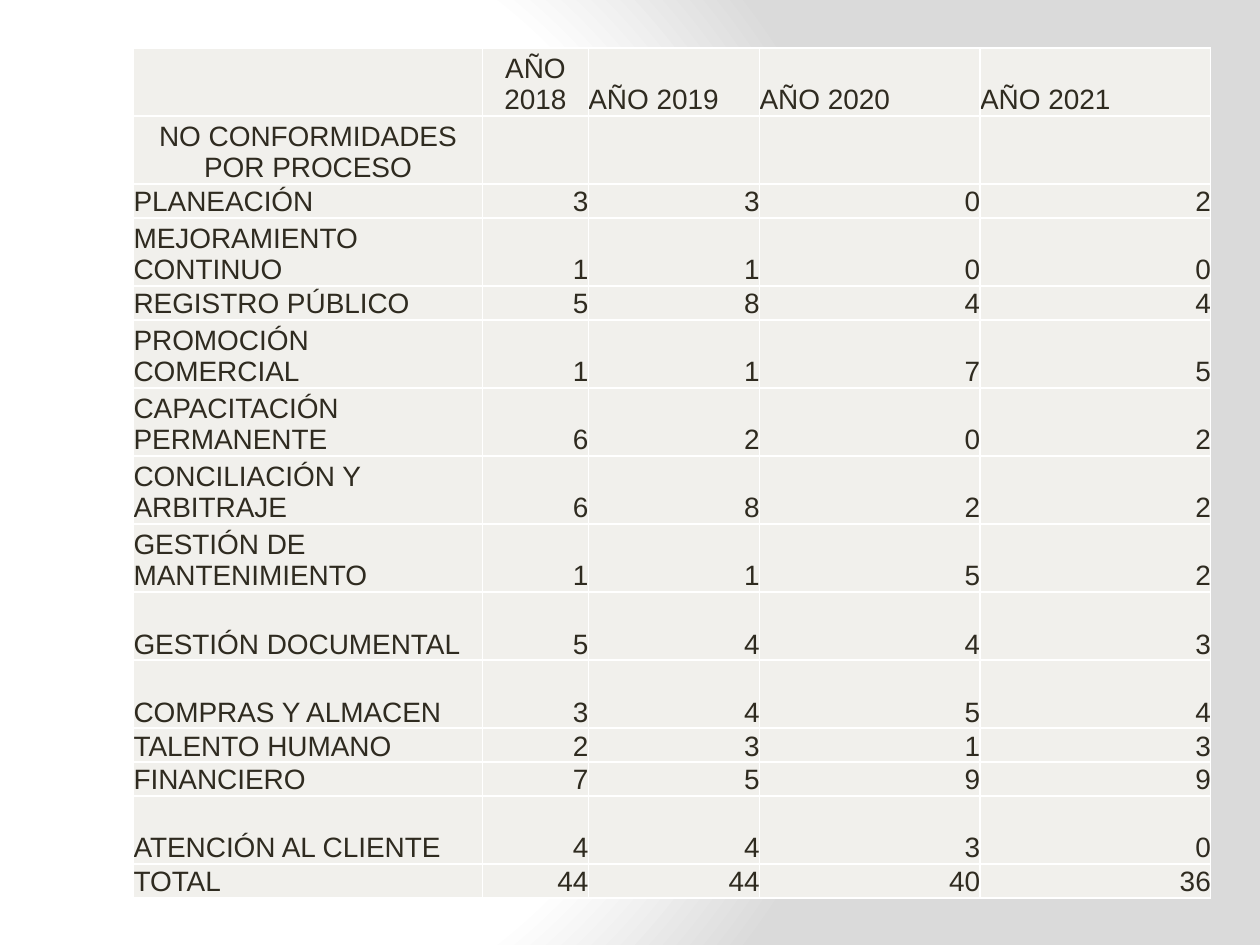
from lxml import etree
from pptx import Presentation
from pptx import util as u
from pptx.dml.color import RGBColor
from pptx.enum import text
from pptx.oxml import parse_xml
from pptx.oxml.ns import nsdecls

INK = RGBColor(0x2F, 0x2B, 0x20)
PALE = RGBColor(0xF1, 0xF0, 0xEC)
WHITE = RGBColor(0xFF, 0xFF, 0xFF)
GREY = RGBColor(0xDA, 0xDA, 0xDA)
LEFT, MID, RIGHT = text.PP_ALIGN.LEFT, text.PP_ALIGN.CENTER, text.PP_ALIGN.RIGHT

# Process, row height in lines, findings per year
DATA = [
    ("PLANEACIÓN", 1, (3, 3, 0, 2)),
    ("MEJORAMIENTO CONTINUO", 2, (1, 1, 0, 0)),
    ("REGISTRO PÚBLICO", 1, (5, 8, 4, 4)),
    ("PROMOCIÓN COMERCIAL", 2, (1, 1, 7, 5)),
    ("CAPACITACIÓN PERMANENTE", 2, (6, 2, 0, 2)),
    ("CONCILIACIÓN Y ARBITRAJE", 2, (6, 8, 2, 2)),
    ("GESTIÓN DE MANTENIMIENTO", 2, (1, 1, 5, 2)),
    ("GESTIÓN DOCUMENTAL", 2, (5, 4, 4, 3)),
    ("COMPRAS Y ALMACEN", 2, (3, 4, 5, 4)),
    ("TALENTO HUMANO", 1, (2, 3, 1, 3)),
    ("FINANCIERO", 1, (7, 5, 9, 9)),
    ("ATENCIÓN AL CLIENTE", 2, (4, 4, 3, 0)),
]
sums = [sum(col) for col in zip(*(vals for _, _, vals in DATA))]
years = [f"AÑO {year}" for year in range(2018, 2022)]
rows = [("", 2, years), ("NO CONFORMIDADES POR PROCESO", 2, [""] * 4),
        *DATA, ("TOTAL", 1, sums)]
COLS = [2.77, 0.84, 1.36, 1.75, 1.83]
LINE = 0.27

deck = Presentation()
deck.slide_width, deck.slide_height = u.Inches(10), u.Inches(7.5)
slide = deck.slides.add_slide(deck.slide_layouts[6])

# Background: radial fade from white to grey
fill = slide.background.fill
fill.gradient()
stops = "".join(f'<a:gs pos="{pos}000"><a:srgbClr val="{tone}"/></a:gs>'
                for pos, tone in ((0, WHITE), (75, WHITE), (100, GREY)))
fade = parse_xml(
    f'<a:gradFill {nsdecls("a")} rotWithShape="1"><a:gsLst>{stops}</a:gsLst>'
    '<a:path path="circle"><a:fillToRect l="20000" t="50000" r="100000" b="50000"/>'
    '</a:path></a:gradFill>')
old = slide.background._cSld.find(".//" + fade.tag)
old.getparent().replace(old, fade)

# Table grid
high = LINE * sum(size for _, size, _ in rows)
table = slide.shapes.add_table(len(rows), len(COLS), u.Inches(1.06), u.Inches(0.38),
                               u.Inches(sum(COLS)), u.Inches(high)).table
table.first_row = table.horz_banding = False
for col, wide in zip(table.columns, COLS):
    col.width = u.Inches(wide)

# Cells: white rules, pale fill, text at the bottom
for r, (name, size, vals) in enumerate(rows):
    table.rows[r].height = u.Inches(LINE * size)
    for c, val in enumerate([name, *vals]):
        cell = table.cell(r, c)
        cell.margin_left = cell.margin_right = cell.margin_top = cell.margin_bottom = 0
        cell.vertical_anchor = text.MSO_ANCHOR.BOTTOM
        for side in ("lnL", "lnR", "lnT", "lnB"):
            cell._tc.get_or_add_tcPr().append(parse_xml(
                f'<a:{side} {nsdecls("a")} w="12700"><a:solidFill>'
                f'<a:srgbClr val="{WHITE}"/></a:solidFill></a:{side}>'))
        cell.fill.solid()
        cell.fill.fore_color.rgb = PALE
        if val == "":
            continue
        cell.text = str(val)
        para = cell.text_frame.paragraphs[0]
        if (r, c) in ((0, 1), (1, 0)):
            para.alignment = MID
        else:
            para.alignment = RIGHT if r > 1 and c else LEFT
        para.font.name, para.font.size = "Arial", u.Pt(16)
        para.font.color.rgb = INK

deck.save("out.pptx")
